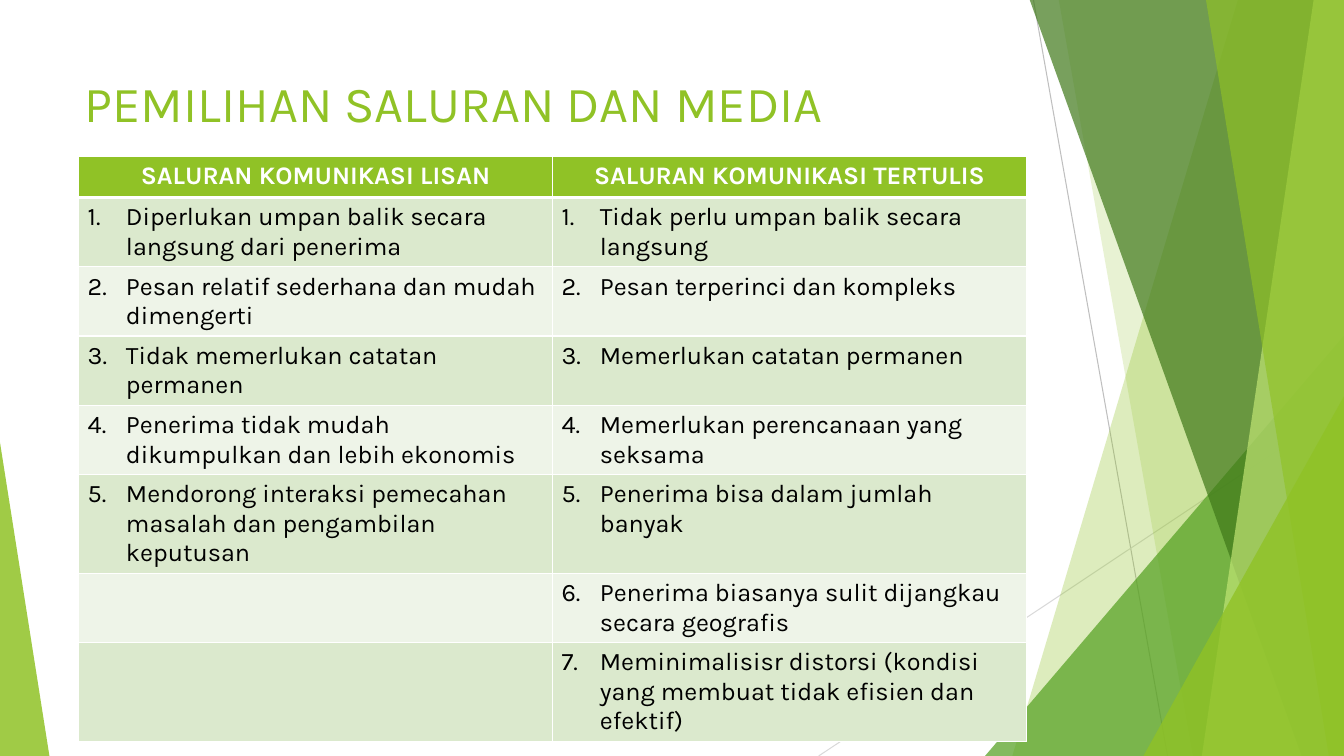
from itertools import zip_longest

from lxml import etree
from pptx import Presentation
from pptx.dml.color import RGBColor
from pptx.enum.shapes import MSO_CONNECTOR, MSO_SHAPE
from pptx.enum.text import MSO_ANCHOR, PP_ALIGN
from pptx.oxml.ns import qn
from pptx.util import Pt

PX = 9144  # 100 px to the inch
PAGE_WIDTH, PAGE_HEIGHT = 1333, 750
TITLE_ONLY = 5
FONT = "Karla"
STRAIGHT = MSO_CONNECTOR.STRAIGHT
TRIANGLE = MSO_SHAPE.ISOSCELES_TRIANGLE
TOP = MSO_ANCHOR.TOP
LEFT, CENTER = PP_ALIGN.LEFT, PP_ALIGN.CENTER

WHITE = RGBColor(0xFF, 0xFF, 0xFF)
BLACK = RGBColor(0x00, 0x00, 0x00)
LIME = RGBColor(0x90, 0xC2, 0x26)
PALE_LIME = RGBColor(0xC0, 0xE4, 0x74)
GREEN = RGBColor(0x54, 0xA0, 0x21)
DARK_GREEN = RGBColor(0x3F, 0x78, 0x19)
GREY = RGBColor(0xBF, 0xBF, 0xBF)
LIGHT_GREY = RGBColor(0xD9, 0xD9, 0xD9)
BAND_DARK = RGBColor(0xDB, 0xE9, 0xCD)
BAND_LIGHT = RGBColor(0xEE, 0xF4, 0xE8)

TITLE = "PEMILIHAN SALURAN DAN MEDIA"
CHANNELS = {
    "SALURAN KOMUNIKASI LISAN": [
        "Diperlukan umpan balik secara langsung dari penerima",
        "Pesan relatif sederhana dan mudah dimengerti",
        "Tidak memerlukan catatan permanen",
        "Penerima tidak mudah dikumpulkan dan lebih ekonomis",
        "Mendorong interaksi pemecahan masalah dan pengambilan keputusan",
    ],
    "SALURAN KOMUNIKASI TERTULIS": [
        "Tidak perlu umpan balik secara langsung",
        "Pesan terperinci dan kompleks",
        "Memerlukan catatan permanen",
        "Memerlukan perencanaan yang seksama",
        "Penerima bisa dalam jumlah banyak",
        "Penerima biasanya sulit dijangkau secara geografis",
        "Meminimalisisr distorsi (kondisi yang membuat tidak efisien dan efektif)",
    ],
}


def px(*lengths):
    return [length * PX for length in lengths]


def style_span(span, size, color, bold=False):
    span.font.name = FONT
    span.font.size = Pt(size)
    span.font.bold = bold
    span.font.color.rgb = color


# Decoration
def paint(shape, color, opacity):
    shape.shadow.inherit = False
    shape.line.fill.background()
    shape.fill.solid()
    shape.fill.fore_color.rgb = color
    tint = shape.fill._xPr.find(qn("a:solidFill"))[0]
    etree.SubElement(tint, qn("a:alpha"), val=str(opacity * 1000))


def add_thin_line(page, start, end, color):
    line = page.shapes.add_connector(STRAIGHT, *px(*start, *end))
    line.line.color.rgb = color
    line.line.width = Pt(0.75)
    etree.SubElement(line._element.spPr, qn("a:effectLst"))


def add_blade(page, top_left, bottom_left, right, bottom, color, opacity):
    """Band from a slanted left edge to the right side of the box."""
    builder = page.shapes.build_freeform(top_left, -1, scale=PX)
    builder.add_line_segments([(right, -1), (right, bottom), (bottom_left, bottom)])
    paint(builder.convert_to_shape(), color, opacity)


def add_corner(page, left, bottom, width, height, apex, color, opacity):
    corner = page.shapes.add_shape(TRIANGLE, *px(left, bottom - height, width, height))
    corner.adjustments[0] = apex
    paint(corner, color, opacity)


def add_decoration(page, left, top, width, height):
    right, bottom = left + width, top + height
    add_thin_line(page, (right - 308, top), (right - 175, bottom), GREY)
    add_thin_line(page, (right, top + 403), (right - 521, bottom), LIGHT_GREY)

    def blade(top_inset, bottom_inset, color, opacity):
        add_blade(page, right - top_inset, right - bottom_inset, right, bottom,
                  color, opacity)

    blade(105, 329, LIME, 30)
    blade(283, 150, LIME, 20)
    add_corner(page, right - 356, bottom, 356, 417, 1, GREEN, 72)
    blade(312, 42, DARK_GREEN, 70)
    blade(30, 141, PALE_LIME, 70)
    blade(137, 15, LIME, 65)
    add_corner(page, right - 199, bottom, 199, 357, 1, LIME, 80)
    add_corner(page, left, bottom, 49, 311, 0, LIME, 85)


# Title
def add_title(page, left, top, width, height):
    title = page.shapes.title
    title.left, title.top, title.width, title.height = px(left, top, width, height)
    title._element.getparent().append(title._element)  # in front of the decoration
    frame = title.text_frame
    frame.text = TITLE
    frame.word_wrap = True
    frame.vertical_anchor = TOP
    frame.paragraphs[0].alignment = LEFT
    style_span(frame.paragraphs[0].runs[0], 36, LIME)


# Table
def set_borders(cell, top_width, bottom_width):
    properties = cell._tc.get_or_add_tcPr()
    widths = {"lnL": 1, "lnR": 1, "lnT": top_width, "lnB": bottom_width}
    for index, (side, width) in enumerate(widths.items()):
        border = etree.Element(qn(f"a:{side}"), w=str(Pt(width)))
        fill = etree.SubElement(border, qn("a:solidFill"))
        etree.SubElement(fill, qn("a:srgbClr"), val=str(WHITE))
        properties.insert(index, border)


def number_paragraph(para, number):
    properties = para._p.get_or_add_pPr()
    properties.set("marL", str(38 * PX))
    properties.set("indent", str(-38 * PX))
    etree.SubElement(properties, qn("a:buFont"), typeface="+mj-lt")
    etree.SubElement(properties, qn("a:buAutoNum"), type="arabicPeriod",
                     startAt=str(number))


def fill_cell(cell, text, row):
    header = row == 0
    cell.fill.solid()
    cell.fill.fore_color.rgb = LIME if header else BAND_DARK if row % 2 else BAND_LIGHT
    set_borders(cell, 3 if row == 1 else 1, 3 if header else 1)
    cell.margin_left, cell.margin_right, cell.margin_top, cell.margin_bottom = px(9, 9, 5, 5)
    if not text:
        return
    cell.text_frame.text = text
    para = cell.text_frame.paragraphs[0]
    style_span(para.runs[0], 18, WHITE if header else BLACK, header)
    if header:
        para.alignment = CENTER
    else:
        number_paragraph(para, row)


def add_channel_table(page, left, top, width, row_height):
    rows = [tuple(CHANNELS), *zip_longest(*CHANNELS.values(), fillvalue="")]
    box = px(left, top, width, row_height * len(rows))
    table = page.shapes.add_table(len(rows), len(CHANNELS), *box).table
    for row, texts in enumerate(rows):
        for column, text in enumerate(texts):
            fill_cell(table.cell(row, column), text, row)


def main():
    deck = Presentation()
    deck.slide_width, deck.slide_height = px(PAGE_WIDTH, PAGE_HEIGHT)
    page = deck.slides.add_slide(deck.slide_layouts[TITLE_ONLY])
    add_decoration(page, 0, 0, PAGE_WIDTH, PAGE_HEIGHT)
    add_title(page, 74, 67, 940, 144)
    add_channel_table(page, 78, 155, 940, 41)
    deck.save("out.pptx")


if __name__ == "__main__":
    main()
